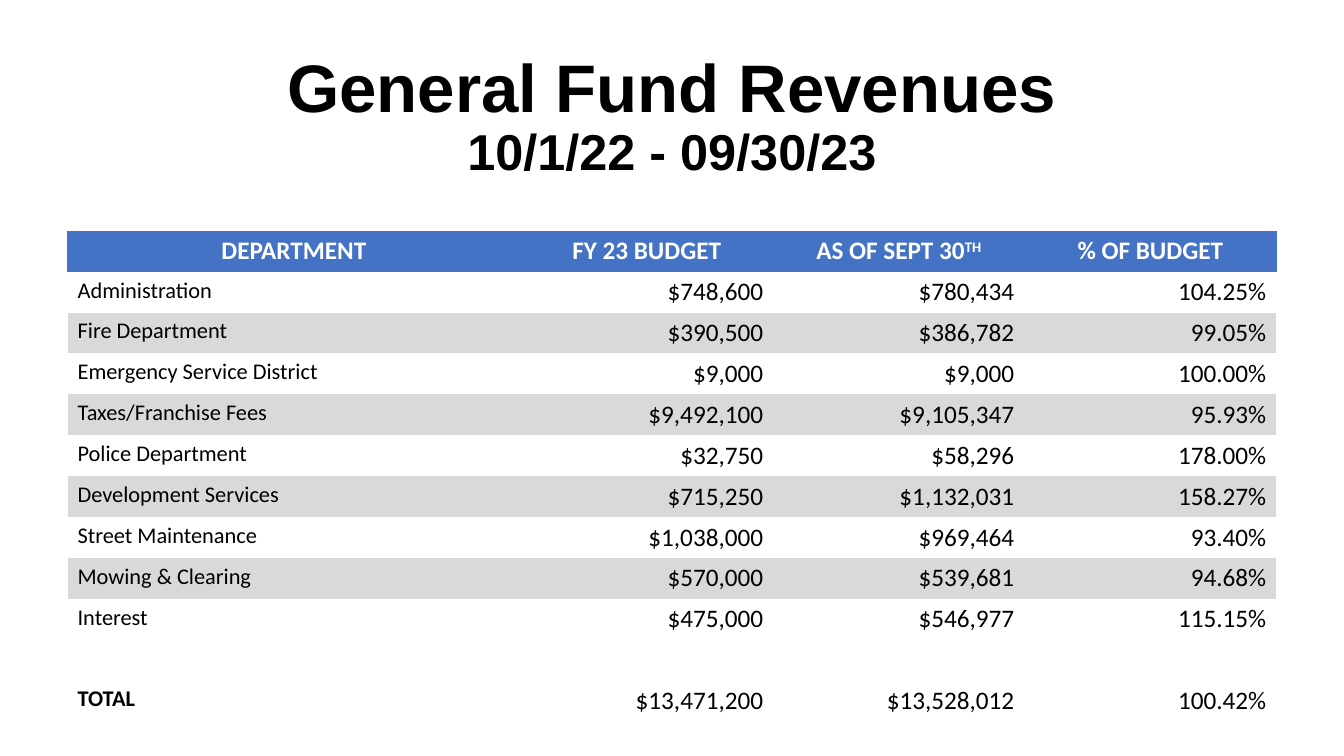
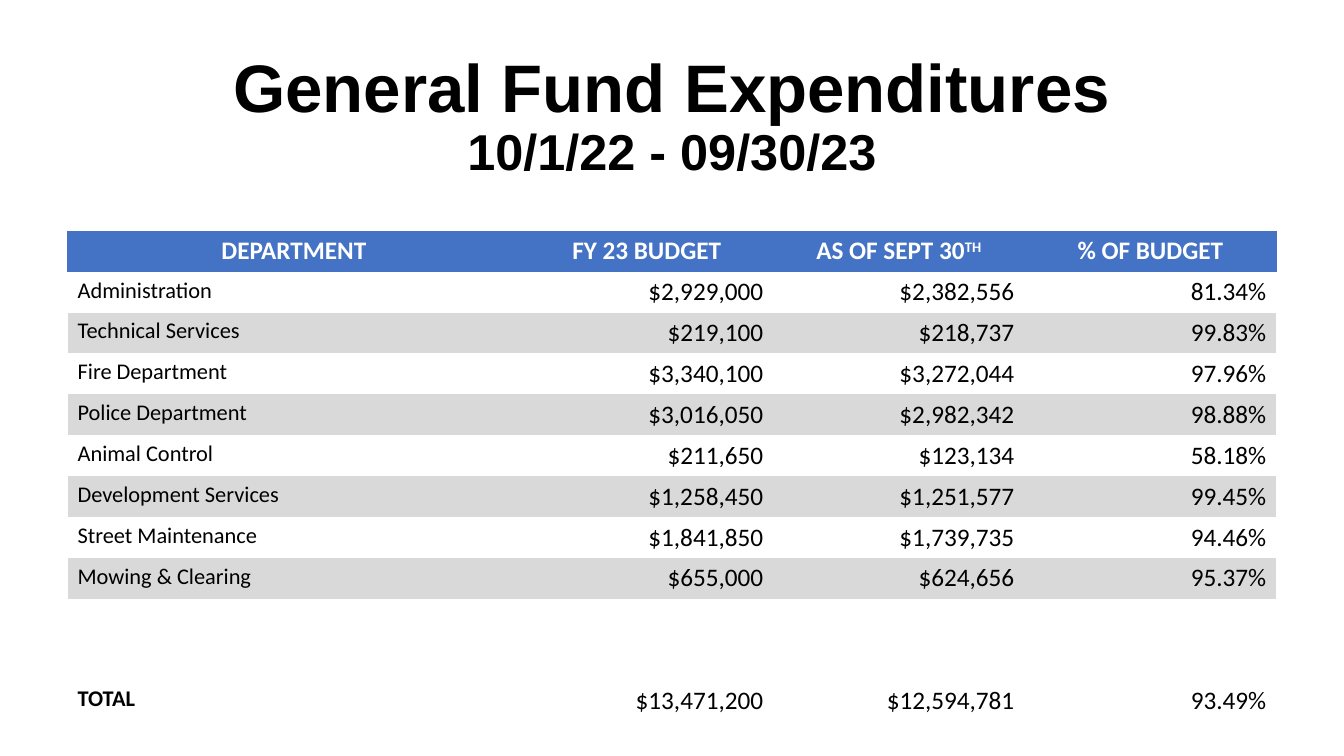
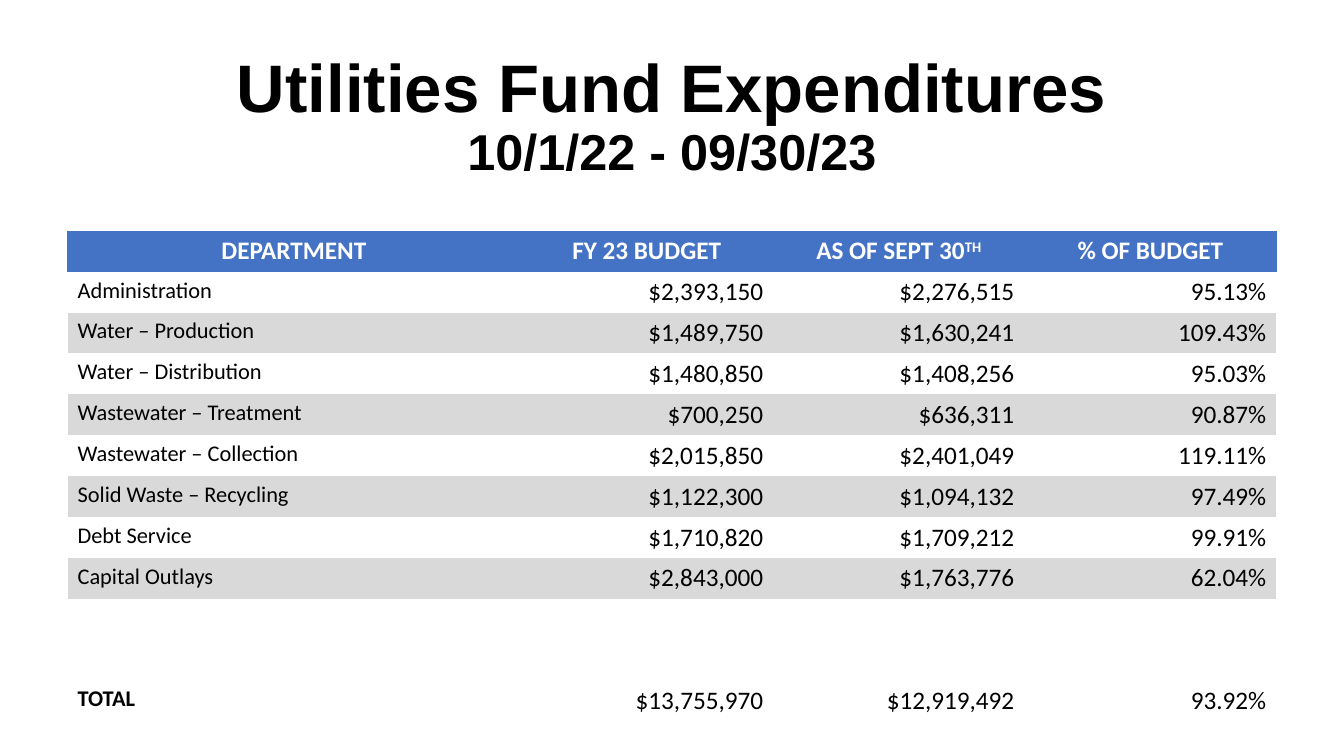
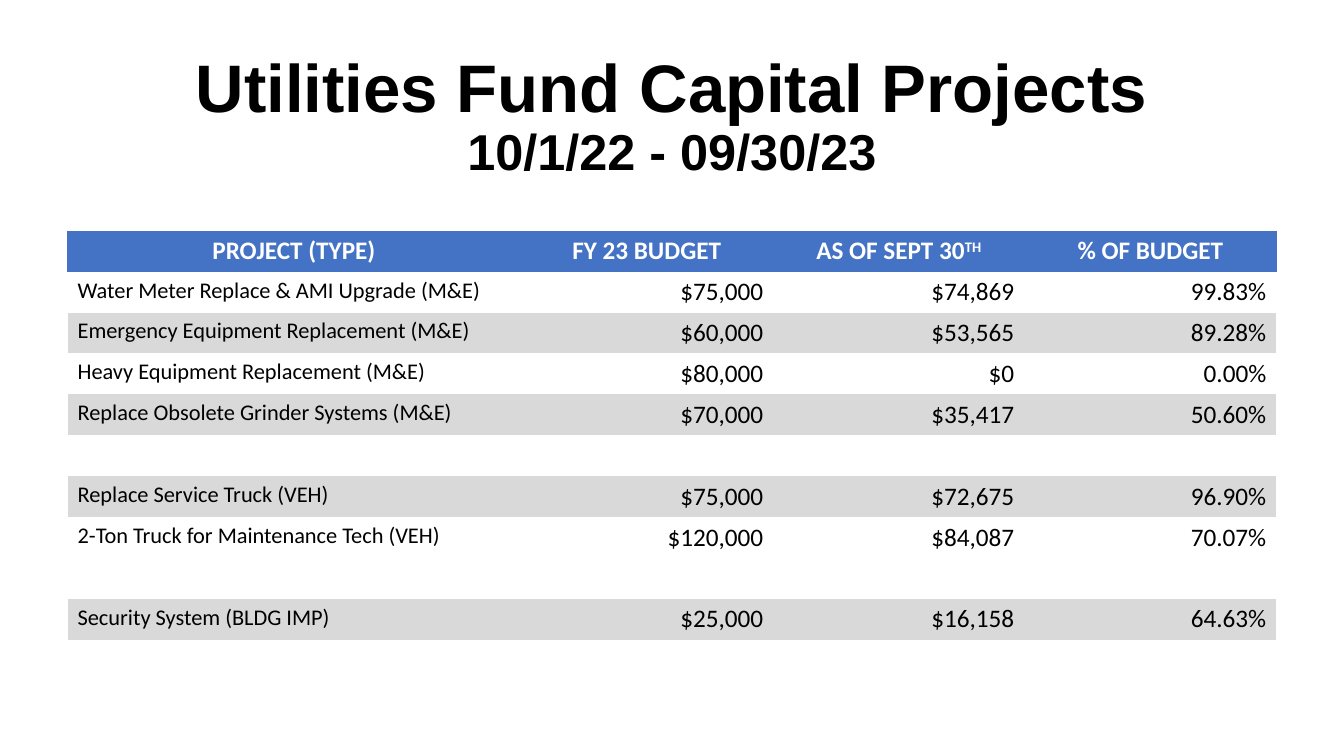
import pptx
import pptx.dml.color
import pptx.enum.text
import pptx.oxml.ns
import pptx.util
import lxml.etree

Inches = pptx.util.Inches
Pt = pptx.util.Pt
ALIGN = pptx.enum.text.PP_ALIGN

COLORS = {"text": "000000", "header": "4472C4", "header_text": "FFFFFF", "band": "D9D9D9"}
TITLE = {"name": "Arial", "size": Pt(48), "bold": True, "color": "text"}
PERIOD = {**TITLE, "size": Pt(36)}
HEADER = {"name": "Calibri", "size": Pt(18), "bold": True, "color": "header_text"}
LABEL = {"name": "Calibri", "size": Pt(16), "bold": False, "color": "text"}
TOTAL = {**LABEL, "bold": True}
VALUE = {**LABEL, "size": Pt(18)}

LEFT, WIDTH = 0.67, 11.99
COLUMN_WIDTHS = [4.49, 2.51, 2.49, 2.5]
ROW_COUNT, TABLE_HEIGHT = 12, 4.87
NO_STYLE = "{2D5ABB26-0587-4C30-8999-92F81FD0307C}"
BLANK = ("", "", "", "")

REPORTS = [
    ("General Fund Revenues", "DEPARTMENT", [
        ("Administration", "$748,600", "$780,434", "104.25%"),
        ("Fire Department", "$390,500", "$386,782", "99.05%"),
        ("Emergency Service District", "$9,000", "$9,000", "100.00%"),
        ("Taxes/Franchise Fees", "$9,492,100", "$9,105,347", "95.93%"),
        ("Police Department", "$32,750", "$58,296", "178.00%"),
        ("Development Services", "$715,250", "$1,132,031", "158.27%"),
        ("Street Maintenance", "$1,038,000", "$969,464", "93.40%"),
        ("Mowing & Clearing", "$570,000", "$539,681", "94.68%"),
        ("Interest", "$475,000", "$546,977", "115.15%"),
        BLANK,
        ("TOTAL", "$13,471,200", "$13,528,012", "100.42%"),
    ]),
    ("General Fund Expenditures", "DEPARTMENT", [
        ("Administration", "$2,929,000", "$2,382,556", "81.34%"),
        ("Technical Services", "$219,100", "$218,737", "99.83%"),
        ("Fire Department", "$3,340,100", "$3,272,044", "97.96%"),
        ("Police Department", "$3,016,050", "$2,982,342", "98.88%"),
        ("Animal Control", "$211,650", "$123,134", "58.18%"),
        ("Development Services", "$1,258,450", "$1,251,577", "99.45%"),
        ("Street Maintenance", "$1,841,850", "$1,739,735", "94.46%"),
        ("Mowing & Clearing", "$655,000", "$624,656", "95.37%"),
        BLANK,
        BLANK,
        ("TOTAL", "$13,471,200", "$12,594,781", "93.49%"),
    ]),
    ("Utilities Fund Expenditures", "DEPARTMENT", [
        ("Administration", "$2,393,150", "$2,276,515", "95.13%"),
        ("Water – Production", "$1,489,750", "$1,630,241", "109.43%"),
        ("Water – Distribution", "$1,480,850", "$1,408,256", "95.03%"),
        ("Wastewater – Treatment", "$700,250", "$636,311", "90.87%"),
        ("Wastewater – Collection", "$2,015,850", "$2,401,049", "119.11%"),
        ("Solid Waste – Recycling", "$1,122,300", "$1,094,132", "97.49%"),
        ("Debt Service", "$1,710,820", "$1,709,212", "99.91%"),
        ("Capital Outlays", "$2,843,000", "$1,763,776", "62.04%"),
        BLANK,
        BLANK,
        ("TOTAL", "$13,755,970", "$12,919,492", "93.92%"),
    ]),
    ("Utilities Fund Capital Projects", "PROJECT (TYPE)", [
        ("Water Meter Replace & AMI Upgrade (M&E)", "$75,000", "$74,869", "99.83%"),
        ("Emergency Equipment Replacement (M&E)", "$60,000", "$53,565", "89.28%"),
        ("Heavy Equipment Replacement (M&E)", "$80,000", "$0", "0.00%"),
        ("Replace Obsolete Grinder Systems (M&E)", "$70,000", "$35,417", "50.60%"),
        BLANK,
        ("Replace Service Truck (VEH)", "$75,000", "$72,675", "96.90%"),
        ("2-Ton Truck for Maintenance Tech (VEH)", "$120,000", "$84,087", "70.07%"),
        BLANK,
        ("Security System (BLDG IMP)", "$25,000", "$16,158", "64.63%"),
        BLANK,
        BLANK,
    ]),
]


def add_span(para, text, style):
    span = para.add_run()
    span.text = text
    for name, value in style.items():
        if name == "color":
            span.font.color.rgb = pptx.dml.color.RGBColor.from_string(COLORS[value])
        else:
            setattr(span.font, name, value)
    return span


def add_border(cell, side):
    """Draw a thin header-coloured line; call before the cell is filled."""
    qn = pptx.oxml.ns.qn
    properties = cell._tc.get_or_add_tcPr()
    line = lxml.etree.SubElement(properties, qn("a:" + side), w=str(Pt(0.5)))
    fill = lxml.etree.SubElement(line, qn("a:solidFill"))
    lxml.etree.SubElement(fill, qn("a:srgbClr"), val=COLORS["header"])


deck = pptx.Presentation()
deck.slide_width, deck.slide_height = Inches(13.33), Inches(7.5)

for title, label_heading, rows in REPORTS:
    page = deck.slides.add_slide(deck.slide_layouts[6])

    box = page.shapes.add_textbox(Inches(LEFT), Inches(0.26), Inches(WIDTH), Inches(1.82))
    box.text_frame.word_wrap = True
    box.text_frame.vertical_anchor = pptx.enum.text.MSO_ANCHOR.MIDDLE
    para = box.text_frame.paragraphs[0]
    para.alignment = ALIGN.CENTER
    para.line_spacing = 0.9
    add_span(para, title, TITLE)
    para.add_line_break()
    add_span(para, "10/1/22 - 09/30/23", PERIOD)

    frame = page.shapes.add_table(ROW_COUNT, len(COLUMN_WIDTHS), Inches(LEFT), Inches(2.29),
                                  Inches(WIDTH), Inches(TABLE_HEIGHT))
    table = frame.table
    table.horz_banding = False
    table._tbl.tblPr.find(pptx.oxml.ns.qn("a:tableStyleId")).text = NO_STYLE
    for column, width in zip(table.columns, COLUMN_WIDTHS):
        column.width = Inches(width)
    for row in table.rows:
        row.height = Inches(TABLE_HEIGHT / ROW_COUNT)

    headings = [label_heading, "FY 23 BUDGET", "AS OF SEPT 30", "% OF BUDGET"]
    border_sides = [["lnL", "lnT"], ["lnT"], ["lnT"], ["lnR", "lnT"]]
    for cell, heading, sides in zip(table.rows[0].cells, headings, border_sides):
        for side in sides:
            add_border(cell, side)
        cell.fill.solid()
        cell.fill.fore_color.rgb = pptx.dml.color.RGBColor.from_string(COLORS["header"])
        para = cell.text_frame.paragraphs[0]
        para.alignment = ALIGN.CENTER
        add_span(para, heading, HEADER)
        if heading == "AS OF SEPT 30":
            ordinal = add_span(para, "TH", HEADER)
            ordinal._r.get_or_add_rPr().set("baseline", "30000")

    # A band never follows another shaded row, and skips blanks and the total.
    shaded = True
    for row_index, texts in enumerate(rows, start=1):
        shaded = texts[0] not in ("", "TOTAL") and not shaded
        for column_index, text in enumerate(texts):
            cell = table.cell(row_index, column_index)
            if shaded:
                cell.fill.solid()
                cell.fill.fore_color.rgb = pptx.dml.color.RGBColor.from_string(COLORS["band"])
            else:
                cell.fill.background()
            if not text:
                continue
            para = cell.text_frame.paragraphs[0]
            if column_index:
                para.alignment = ALIGN.RIGHT
                add_span(para, text, VALUE)
            else:
                add_span(para, text, TOTAL if text == "TOTAL" else LABEL)

deck.save("out.pptx")
